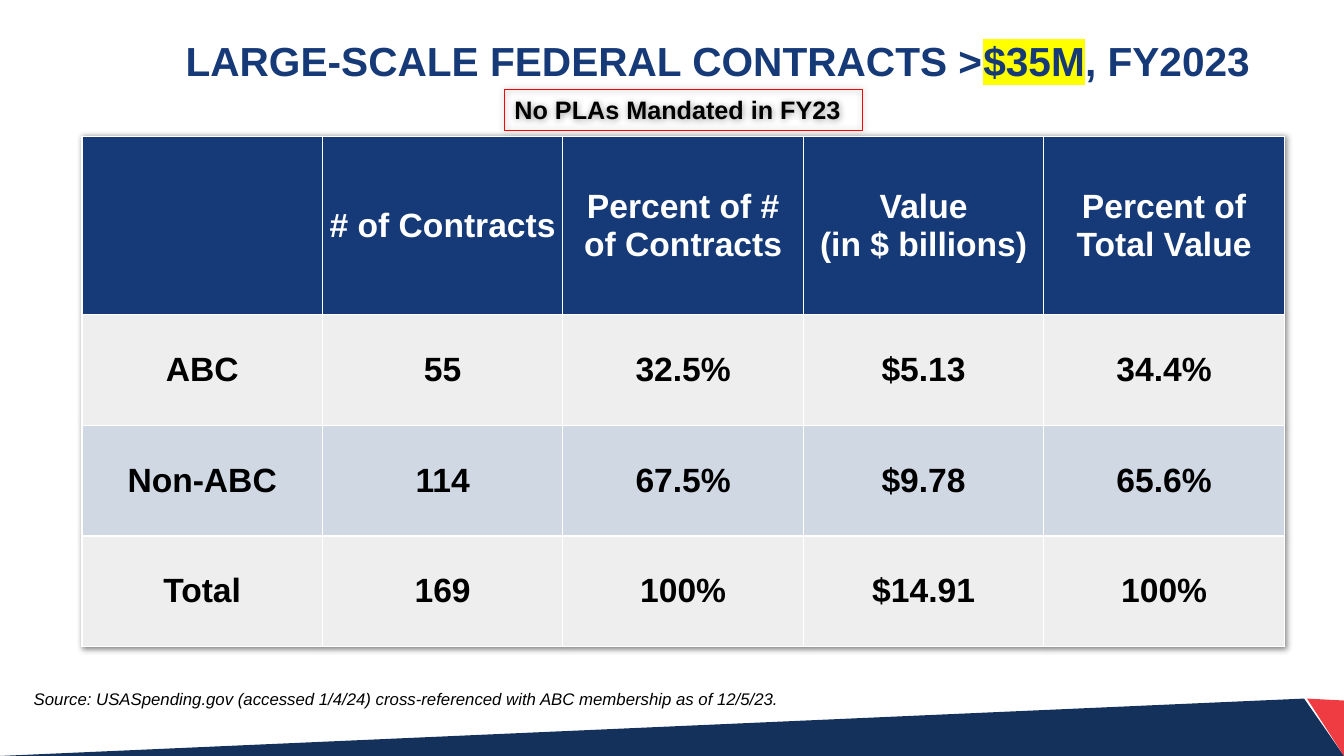
from lxml.etree import SubElement
from pptx import Presentation
from pptx.dml.color import RGBColor
from pptx.enum.shapes import MSO_SHAPE
from pptx.enum.text import MSO_ANCHOR, PP_ALIGN
from pptx.oxml import parse_xml
from pptx.oxml.ns import nsdecls, qn
from pptx.util import Pt

FONT = "Arial"
BLUE = RGBColor(0x16, 0x3A, 0x78)
NAVY = RGBColor(0x14, 0x31, 0x5B)
CORAL = RGBColor(0xEF, 0x3C, 0x43)
RED = RGBColor(0xFF, 0x00, 0x00)
YELLOW = RGBColor(0xFF, 0xFF, 0x00)
WHITE = RGBColor(0xFF, 0xFF, 0xFF)
BLACK = RGBColor(0x00, 0x00, 0x00)
GRAY = RGBColor(0xEE, 0xEE, 0xEE)
PALE = RGBColor(0xD0, 0xD8, 0xE4)

ROWS = [
    ["", "# of Contracts", "Percent of # of Contracts",
     "Value\n(in $ billions)", "Percent of Total Value"],
    ["ABC", "55", "32.5%", "$5.13", "34.4%"],
    ["Non-ABC", "114", "67.5%", "$9.78", "65.6%"],
    ["Total", "169", "100%", "$14.91", "100%"],
]
FILLS = [BLUE, GRAY, PALE, GRAY]
HEIGHTS = [127.4, 79, 79, 79]


def write(frame, text, size=24, color=BLACK, bold=False, italic=False,
          align=PP_ALIGN.LEFT, spacing=None, mark=""):
    """Fill a text frame, one paragraph a line; mark is the highlighted part."""
    frame.word_wrap = True
    for index, line in enumerate(text.split("\n")):
        para = frame.add_paragraph() if index else frame.paragraphs[0]
        para.alignment = align
        para.line_spacing = spacing
        for part in line.partition(mark) if mark else [line]:
            run = para.add_run()
            run.text = part
            font = run.font
            font.name, font.size = FONT, Pt(size)
            font.bold, font.italic = bold, italic
            font.color.rgb = color
            if mark and part == mark:
                glow = parse_xml(f'<a:highlight {nsdecls("a")}>'
                                 f'<a:srgbClr val="{YELLOW}"/></a:highlight>')
                run.font.fill._xPr.find(qn("a:solidFill")).addnext(glow)


def add_text(slide, left, top, width, height, text,
             anchor=MSO_ANCHOR.TOP, **style):
    box = slide.shapes.add_textbox(Pt(left), Pt(top), Pt(width), Pt(height))
    box.text_frame.vertical_anchor = anchor
    write(box.text_frame, text, **style)


def add_wedge(slide, points, color):
    start, *rest = [(Pt(x), Pt(y)) for x, y in points]
    builder = slide.shapes.build_freeform(*start)
    builder.add_line_segments(rest, close=True)
    wedge = builder.convert_to_shape()
    wedge.shadow.inherit = False
    wedge.fill.solid()
    wedge.fill.fore_color.rgb = color
    wedge.line.fill.background()


def make_shadow(blur, dist, angle, alpha):
    return parse_xml(
        f'<a:effectLst {nsdecls("a")}><a:outerShdw blurRad="{Pt(blur)}" '
        f'dist="{Pt(dist)}" dir="{angle * 60000}" algn="ctr" rotWithShape="0">'
        f'<a:srgbClr val="{BLACK}"><a:alpha val="{alpha * 1000}"/></a:srgbClr>'
        f'</a:outerShdw></a:effectLst>')


def add_label(slide, left, top, width, height, text):
    label = slide.shapes.add_shape(
        MSO_SHAPE.RECTANGLE, Pt(left), Pt(top), Pt(width), Pt(height))
    label.shadow.inherit = False
    label.fill.background()
    label.line.color.rgb = RED
    label.line.width = Pt(0.75)
    props = label._element.spPr
    props.replace(props.find(qn("a:effectLst")), make_shadow(5, 0, 0, 40))
    label.text_frame.vertical_anchor = MSO_ANCHOR.TOP
    write(label.text_frame, text, size=18, bold=True)


def set_border(cell):
    props = cell._tc.get_or_add_tcPr()
    for index, side in enumerate(("lnL", "lnR", "lnT", "lnB")):
        line = SubElement(props, qn(f"a:{side}"), w=str(Pt(1)))
        fill = SubElement(line, qn("a:solidFill"))
        SubElement(fill, qn("a:srgbClr"), val=str(WHITE))
        props.insert(index, line)


def add_grid(slide, left, top, width):
    frame = slide.shapes.add_table(
        len(ROWS), len(ROWS[0]), Pt(left), Pt(top), Pt(width), Pt(sum(HEIGHTS)))
    table = frame.table
    table.horz_banding = False
    table._tbl.tblPr.insert(0, make_shadow(4, 1, 45, 50))
    for column in table.columns:
        column.width = Pt(width / len(ROWS[0]))
    for r, texts in enumerate(ROWS):
        table.rows[r].height = Pt(HEIGHTS[r])
        for c, text in enumerate(texts):
            cell = table.cell(r, c)
            cell.fill.solid()
            cell.fill.fore_color.rgb = FILLS[r]
            cell.vertical_anchor = MSO_ANCHOR.MIDDLE
            cell.margin_left = cell.margin_right = Pt(5)
            cell.margin_top = cell.margin_bottom = Pt(3)
            set_border(cell)
            if text:
                write(cell.text_frame, text, bold=True, align=PP_ALIGN.CENTER,
                      color=BLACK if r else WHITE)


def main():
    deck = Presentation()
    deck.slide_width, deck.slide_height = Pt(960), Pt(540)
    slide = deck.slides.add_slide(deck.slide_layouts[6])
    add_wedge(slide, [(0, 540), (931.5, 499), (960, 540)], NAVY)
    add_wedge(slide, [(933.6, 499), (960, 500.4), (960, 540)], CORAL)
    add_text(slide, 125.5, 20.5, 834.5, 49,
             "LARGE-SCALE FEDERAL CONTRACTS >$35M, FY2023", size=29, color=BLUE,
             bold=True, spacing=0.9, mark="$35M", anchor=MSO_ANCHOR.MIDDLE)
    add_grid(slide, 58.5, 97.5, 859)
    add_text(slide, 17, 488.5, 552, 21.8,
             "Source: USASpending.gov (accessed 1/4/24) cross-referenced "
             "with ABC membership as of 12/5/23.", size=12, italic=True)
    add_label(slide, 360.4, 64, 255.6, 29, "No PLAs Mandated in FY23")
    deck.save("out.pptx")


if __name__ == "__main__":
    main()
